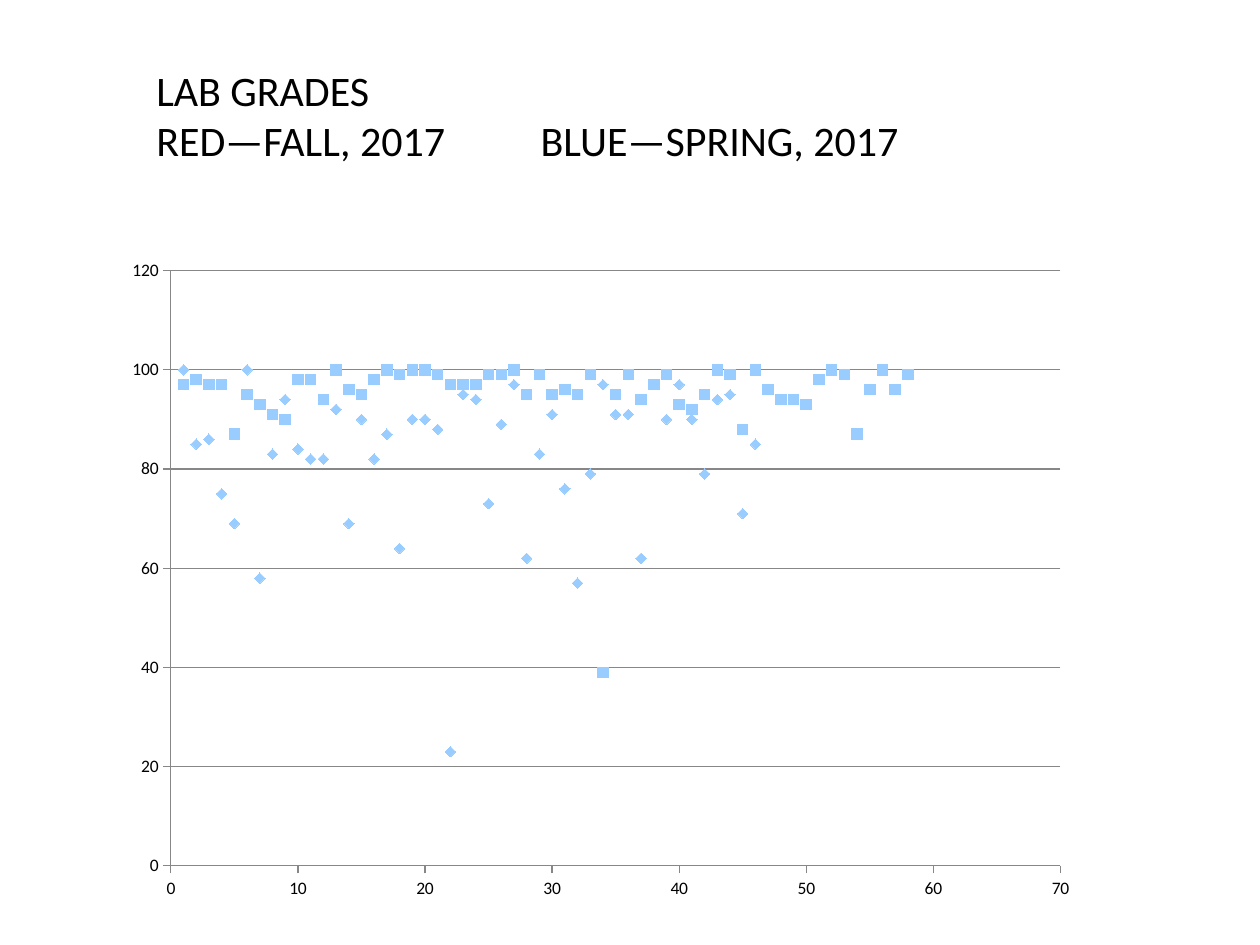
"""Build a slide that compares lab grades of two terms in a scatter chart."""
import pptx
import pptx.chart.data
import pptx.dml.color
import pptx.enum.chart
import pptx.enum.text
import pptx.oxml
import pptx.oxml.ns
import pptx.util
from pptx.util import Inches

FONT = "Calibri"
BLACK, GRAY, MARKER = "000000", "878787", "99CCFF"
SQUARE_GRADES = [
    97, 98, 97, 97, 87, 95, 93, 91, 90, 98, 98, 94, 100, 96, 95, 98, 100, 99, 100, 100,
    99, 97, 97, 97, 99, 99, 100, 95, 99, 95, 96, 95, 99, 39, 95, 99, 94, 97, 99, 93,
    92, 95, 100, 99, 88, 100, 96, 94, 94, 93, 98, 100, 99, 87, 96, 100, 96, 99,
]
DIAMOND_GRADES = [
    100, 85, 86, 75, 69, 100, 58, 83, 94, 84, 82, 82, 92, 69, 90, 82, 87, 64, 90, 90,
    88, 23, 95, 94, 73, 89, 97, 62, 83, 91, 76, 57, 79, 97, 91, 91, 62, 97, 90, 97,
    90, 79, 94, 95, 71, 85,
]


def color(value):
    """Turn a hex string into a colour."""
    return pptx.dml.color.RGBColor.from_string(value)


def style_font(font, size):
    """Give a font the slide's typeface, a size and black."""
    font.name = FONT
    font.size = pptx.util.Pt(size)
    font.color.rgb = color(BLACK)


def style_line(line):
    """Draw a chart line thin and gray."""
    line.color.rgb = color(GRAY)
    line.width = pptx.util.Pt(0.75)


def add_tab_stop(para, position):
    """Set a left tab stop in a paragraph."""
    stops = pptx.oxml.parse_xml(
        f'<a:tabLst {pptx.oxml.ns.nsdecls("a")}><a:tab pos="{position}" algn="l"/></a:tabLst>')
    para._p.get_or_add_pPr().append(stops)


def fill_title(box, lines):
    """Place the title and write each line as a paragraph of runs."""
    box.left, box.top = Inches(1.14), Inches(0.46)
    box.width, box.height = Inches(7.89), Inches(0.91)
    frame = box.text_frame
    frame.word_wrap = True
    frame.auto_size = pptx.enum.text.MSO_AUTO_SIZE.SHAPE_TO_FIT_TEXT
    frame.vertical_anchor = pptx.enum.text.MSO_ANCHOR.TOP
    for index, texts in enumerate(lines):
        para = frame.add_paragraph() if index else frame.paragraphs[0]
        para.alignment = pptx.enum.text.PP_ALIGN.LEFT
        add_tab_stop(para, Inches(3.05))
        for text in texts:
            span = para.add_run()
            span.text = text
            style_font(span.font, 24)


def style_axis(axis, maximum, step, grid):
    """Set the scale, ticks, lines and labels of an axis."""
    axis.minimum_scale, axis.maximum_scale, axis.major_unit = 0, maximum, step
    axis.major_tick_mark = pptx.enum.chart.XL_TICK_MARK.OUTSIDE
    axis.minor_tick_mark = pptx.enum.chart.XL_TICK_MARK.NONE
    axis.has_major_gridlines = grid
    style_line(axis.format.line)
    if grid:
        style_line(axis.major_gridlines.format.line)
    style_font(axis.tick_labels.font, 10)


def style_series(series, marker_style):
    """Show a series as markers without a joining line."""
    series.smooth = False
    series.format.line.fill.background()
    marker = series.marker
    marker.style, marker.size = marker_style, 6
    marker.format.fill.solid()
    marker.format.fill.fore_color.rgb = color(MARKER)
    marker.format.line.fill.background()


def place_plot(chart, left, top, width, height):
    """Fix the inner plot area as fractions of the chart."""
    area = chart._chartSpace.chart.plotArea
    for old in area.findall(pptx.oxml.ns.qn("c:layout")):
        area.remove(old)
    places = "".join(f'<c:{key} val="{value}"/>' for key, value in
                     zip("xywh", (left, top, width, height)))
    area.insert(0, pptx.oxml.parse_xml(
        f'<c:layout {pptx.oxml.ns.nsdecls("c")}><c:manualLayout>'
        '<c:layoutTarget val="inner"/><c:xMode val="edge"/><c:yMode val="edge"/>'
        f'{places}</c:manualLayout></c:layout>'))


def add_grades(page):
    """Add the scatter chart with grades numbered by student."""
    data = pptx.chart.data.XyChartData()
    for name, grades in (("Series 1", SQUARE_GRADES), ("Series 2", DIAMOND_GRADES)):
        series = data.add_series(name)
        for student, grade in enumerate(grades, 1):
            series.add_data_point(student, grade)
    chart = page.shapes.add_chart(
        pptx.enum.chart.XL_CHART_TYPE.XY_SCATTER,
        Inches(0.89), Inches(1.99), Inches(7.76), Inches(5.25), data).chart
    chart.has_legend = chart.has_title = False
    style_font(chart.font, 10)
    plot = chart.plots[0]
    plot.vary_by_categories = False
    styles = pptx.enum.chart.XL_MARKER_STYLE
    for series, style in zip(plot.series, (styles.SQUARE, styles.DIAMOND)):
        style_series(series, style)
    style_axis(chart.category_axis, 70, 10, False)
    style_axis(chart.value_axis, 120, 20, True)
    place_plot(chart, 0.06, 0.03, 0.91, 0.9)


def main():
    """Build and save the deck."""
    deck = pptx.Presentation()
    deck.slide_width, deck.slide_height = Inches(10), Inches(7.5)
    page = deck.slides.add_slide(deck.slide_layouts[5])
    add_grades(page)
    fill_title(page.shapes.title, [
        ["LAB GRADES"],
        ["RED—FALL, 2017", "\t", "BLUE—SPRING, 2017"],
    ])
    deck.save("out.pptx")


if __name__ == "__main__":
    main()
